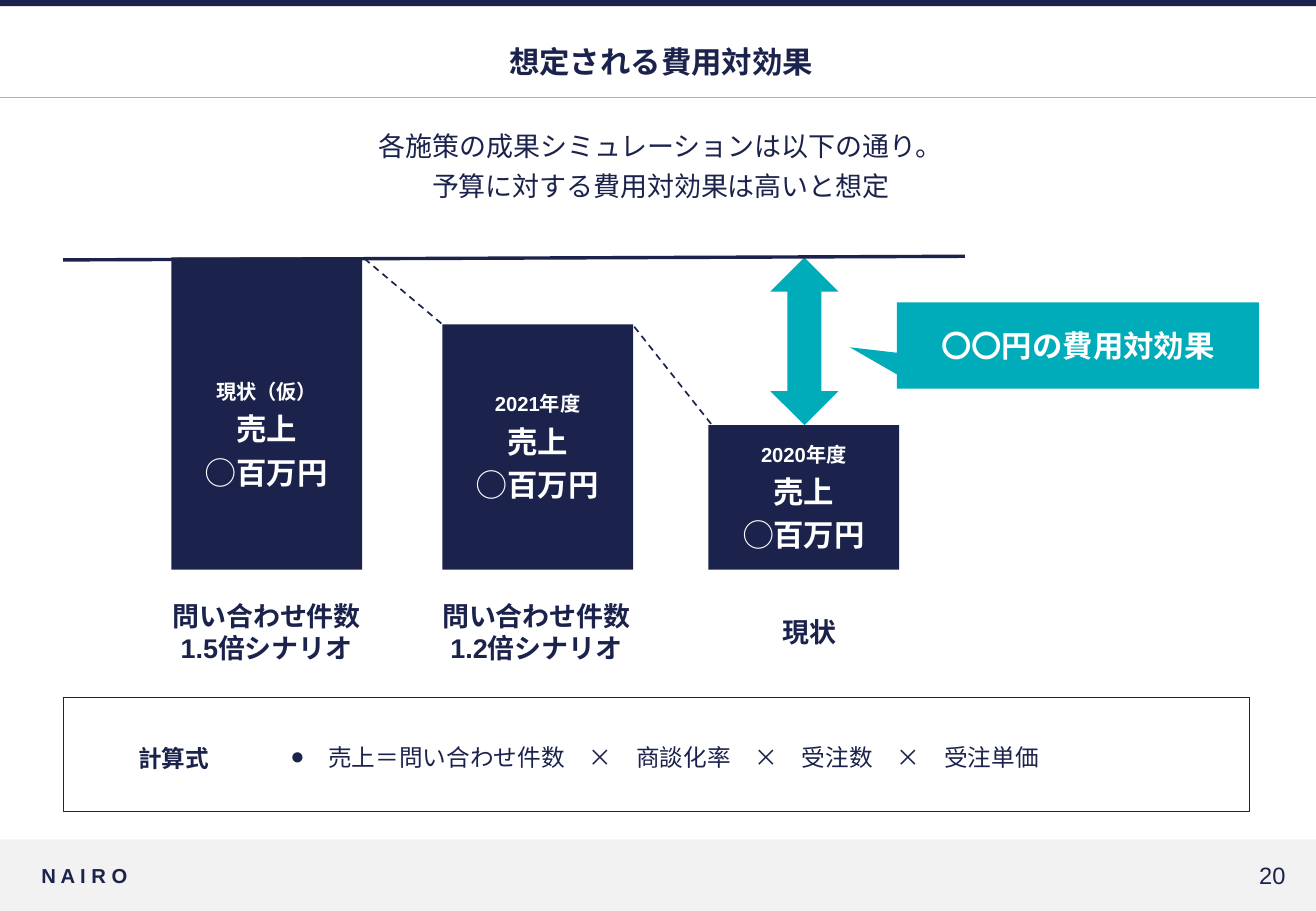
"""Build the cost-effectiveness slide with three sales bars and a formula."""
from lxml import etree
from pptx import Presentation
from pptx import util as u
from pptx.dml.color import RGBColor
from pptx.enum import dml, shapes, text
from pptx.oxml import ns

PX = 9144
NAVY, TEAL, WHITE, GRAY, PALE = "1B224C", "00ACBA", "FFFFFF", "AFAFAF", "F2F2F2"
SANS, CJK = "Arial", "Noto Sans CJK JP"
KIND, ALIGN = shapes.MSO_SHAPE, text.PP_ALIGN
ink = RGBColor.from_string

deck = Presentation()
deck.slide_width, deck.slide_height = 1083 * PX, 750 * PX
slide = deck.slides.add_slide(deck.slide_layouts[5])


def box(kind, area, fill=None, line=None):
    """Add a preset shape, filled or outlined."""
    shape = slide.shapes.add_shape(kind, *[n * PX for n in area])
    shape.shadow.inherit = False
    if fill:
        shape.fill.solid()
        shape.fill.fore_color.rgb = ink(fill)
    else:
        shape.fill.background()
    if line:
        shape.line.color.rgb = ink(line)
        shape.line.width = u.Pt(0.5)
    else:
        shape.line.fill.background()
    return shape


def write(shape, lines, sizes, font=CJK, color=NAVY, bold=True,
          align=ALIGN.CENTER, inset=4, gap=0):
    """Fill a shape with one paragraph per line and format it."""
    frame = shape.text_frame
    frame.text = "\n".join(lines)
    frame.word_wrap = True
    frame.auto_size = text.MSO_AUTO_SIZE.NONE
    frame.vertical_anchor = text.MSO_ANCHOR.MIDDLE
    frame.margin_left = frame.margin_right = inset * PX
    frame.margin_top = frame.margin_bottom = inset * PX
    for para, size in zip(frame.paragraphs, sizes):
        para.alignment = align
        para.space_before, para.space_after = u.Pt(0), u.Pt(gap)
        for run in para.runs:
            run.font.name, run.font.size = font, u.Pt(size)
            run.font.bold, run.font.color.rgb = bold, ink(color)
            east = etree.SubElement(run.font._element, ns.qn("a:ea"))
            east.set("typeface", font)
    return frame


box(KIND.RECTANGLE, (0, 691, 1083, 59), PALE)
box(KIND.RECTANGLE, (0, 0, 1083, 5), NAVY)

title = slide.shapes.title
title.left, title.top, title.width, title.height = [n * PX for n in (52, 31, 984, 39)]
write(title, ["想定される費用対効果"], [18])

bars = [
    (141, 212, 111, "現状（仮）", ["問い合わせ件数", "1.5倍シナリオ"]),
    (364, 267, 333, "2021年度", ["問い合わせ件数", "1.2倍シナリオ"]),
    (583, 350, 558, "2020年度", ["現状"]),
]
for left, top, side, year, label in bars:
    bar = box(KIND.RECTANGLE, (left, top, 157, 469 - top), NAVY)
    frame = write(bar, [year, "売上", "◯百万円"], [12, 18, 18], SANS, WHITE, inset=5, gap=4)
    if left == 141:
        frame.margin_top = 40 * PX
    note = slide.shapes.add_textbox(side * PX, 488 * PX, 217 * PX, 64 * PX)
    write(note, label, [16, 16], SANS)

box(KIND.UP_DOWN_ARROW, (634, 212, 56, 138), TEAL)
call = box(KIND.RECTANGULAR_CALLOUT, (738, 249, 298, 71), TEAL)
call.adjustments[0], call.adjustments[1] = -0.63, 0.02
write(call, ["〇〇円の費用対効果"], [18], color=WHITE, inset=10)

rules = [
    ((0, 80, 1083, 80), GRAY, 0.5, False),
    ((52, 214, 794, 211), NAVY, 2, False),
    ((300, 213, 364, 267), NAVY, 1, True),
    ((522, 269, 586, 350), NAVY, 1, True),
]
for ends, color, width, dash in rules:
    rule = slide.shapes.add_connector(shapes.MSO_CONNECTOR.STRAIGHT, *[n * PX for n in ends])
    rule.line.color.rgb = ink(color)
    rule.line.width = u.Pt(width)
    if dash:
        rule.line.dash_style = dml.MSO_LINE.DASH
    etree.SubElement(rule._element.spPr, ns.qn("a:effectLst"))

box(KIND.RECTANGLE, (52, 574, 976, 94), line=NAVY)
notes = [
    ((52, 101, 984, 71), ["各施策の成果シミュレーションは以下の通り。", "予算に対する費用対効果は高いと想定"],
     16, CJK, False, ALIGN.CENTER, 4),
    ((77, 602, 132, 44), ["計算式"], 14, CJK, True, ALIGN.CENTER, 0),
    ((30, 705, 107, 31), ["N A I R O"], 12, SANS, True, ALIGN.LEFT, 0),
    ((955, 705, 107, 31), ["20"], 14, SANS, False, ALIGN.RIGHT, 0),
    ((235, 607, 768, 32), ["売上＝問い合わせ件数　×　商談化率　×　受注数　×　受注単価"],
     14, CJK, False, ALIGN.LEFT, 0),
]
for area, lines, size, font, bold, align, gap in notes:
    note = slide.shapes.add_textbox(*[n * PX for n in area])
    frame = write(note, lines, [size] * 2, font, NAVY, bold, align, gap=gap)

props = frame.paragraphs[0]._p.get_or_add_pPr()
props.set("marL", str(31 * PX))
props.set("indent", str(-31 * PX))
etree.SubElement(props, ns.qn("a:buFont")).set("typeface", SANS)
etree.SubElement(props, ns.qn("a:buChar")).set("char", "●")

deck.save("out.pptx")
